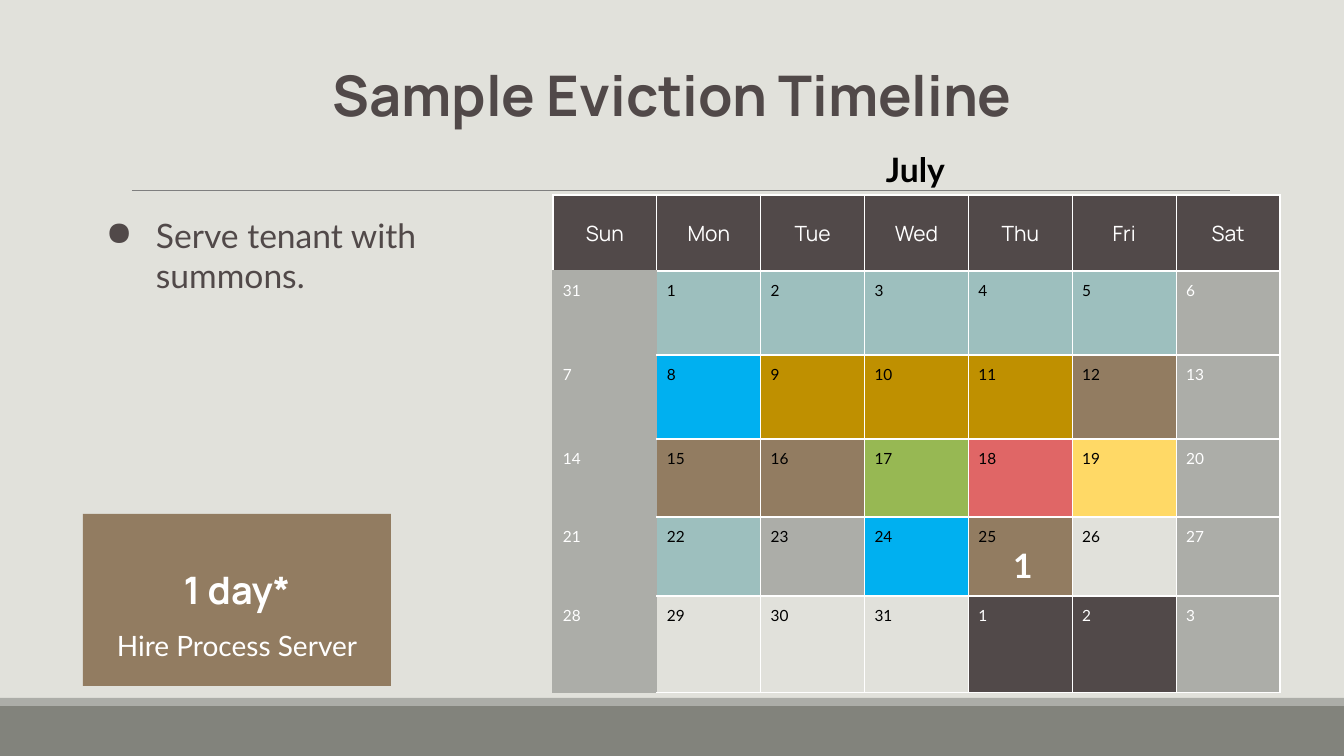
from lxml import etree
from pptx import Presentation
from pptx.dml.color import RGBColor
from pptx.enum.shapes import MSO_CONNECTOR as CONN, MSO_SHAPE as SHAPE
from pptx.enum.text import MSO_ANCHOR as ANCHOR, PP_ALIGN as ALIGN
from pptx.oxml.ns import qn
from pptx.util import Pt

# Content
TITLE = "Sample Eviction Timeline"
MONTH = "July"
TASK = "Serve tenant with summons."
DURATION, STEP = "1 day*", "Hire Process Server"
WEEKDAYS = ["Sun", "Mon", "Tue", "Wed", "Thu", "Fri", "Sat"]
WEEKS = [
    [31, 1, 2, 3, 4, 5, 6],
    [7, 8, 9, 10, 11, 12, 13],
    [14, 15, 16, 17, 18, 19, 20],
    [21, 22, 23, 24, 25, 26, 27],
    [28, 29, 30, 31, 1, 2, 3],
]
BG, DARK, GREY, WHITE, BLACK = "E1E1DB", "514949", "ACADA8", "FFFFFF", "000000"
TEAL, BLUE, GOLD, BROWN = "9DBFBE", "00B0F0", "BF9000", "927C61"
GREEN, RED, YELLOW = "97B853", "E06666", "FFD966"
DAY_FILLS = [
    [GREY, TEAL, TEAL, TEAL, TEAL, TEAL, GREY],
    [GREY, BLUE, GOLD, GOLD, GOLD, BROWN, GREY],
    [GREY, BROWN, BROWN, GREEN, RED, YELLOW, GREY],
    [GREY, TEAL, GREY, BLUE, BROWN, BG, GREY],
    [GREY, BG, BG, BG, DARK, DARK, GREY],
]
COUNTED_DAY, COUNT = (4, 4), "1"  # table row and column

# Layout in px
TABLE_X, TABLE_Y, TABLE_W = 553, 195, 727
ROW_HEIGHTS = [76, 84, 84, 78, 79, 97]
BANDS = [(706, 50, "82837C"), (698, 8, GREY)]


def px(n):
    return round(n * 914400 / 100.8)


def rgb(color):
    return RGBColor.from_string(color)


def style(p, size, font, color, bold=False, align=ALIGN.CENTER):
    p.alignment = align
    for r in p.runs:
        r.font.size, r.font.name, r.font.bold = Pt(size), font, bold
        r.font.color.rgb = rgb(color)


def set_insets(box, left, top, right, bottom):
    box.margin_left, box.margin_top = px(left), px(top)
    box.margin_right, box.margin_bottom = px(right), px(bottom)


def add_rect(x, y, w, h, color):
    s = shapes.add_shape(SHAPE.RECTANGLE, px(x), px(y), px(w), px(h))
    s.shadow.inherit = False
    s.fill.solid()
    s.fill.fore_color.rgb = rgb(color)
    s.line.fill.background()


def add_text(x, y, w, h, text, insets=(5, 3, 5, 3)):
    tf = shapes.add_textbox(px(x), px(y), px(w), px(h)).text_frame
    tf.word_wrap = True
    set_insets(tf, *insets)
    tf.text = text
    return tf


def set_borders(cell, colors):
    tcPr = cell._tc.get_or_add_tcPr()
    for i, (side, color) in enumerate(zip(("lnL", "lnR", "lnT", "lnB"), colors)):
        ln = etree.Element(qn(f"a:{side}"), w=str(Pt(1)))
        fill = etree.SubElement(ln, qn("a:solidFill"))
        etree.SubElement(fill, qn("a:srgbClr"), val=color)
        tcPr.insert(i, ln)


prs = Presentation()
prs.slide_width, prs.slide_height = px(1344), px(756)
slide = prs.slides.add_slide(prs.slide_layouts[6])
slide.background.fill.solid()
slide.background.fill.fore_color.rgb = rgb(BG)
shapes = slide.shapes

# Footer bands and title rule
for y, h, color in BANDS:
    add_rect(0, y, 1344, h, color)
rule = shapes.add_connector(CONN.STRAIGHT, px(132), px(191), px(1230), px(191))
rule.line.color.rgb, rule.line.width = rgb("7F7F7F"), Pt(0.75)
etree.SubElement(rule._element.spPr, qn("a:effectLst"))

# Title
tf = add_text(156, 58, 1032, 73, TITLE)
tf.vertical_anchor = ANCHOR.MIDDLE
style(tf.paragraphs[0], 40, "Manrope", DARK, bold=True)

# Calendar
table = shapes.add_table(len(ROW_HEIGHTS), len(WEEKDAYS), px(TABLE_X), px(TABLE_Y),
                         px(TABLE_W), px(sum(ROW_HEIGHTS))).table
for col in table.columns:
    col.width = px(TABLE_W / len(WEEKDAYS))
for row, h in zip(table.rows, ROW_HEIGHTS):
    row.height = px(h)

for i, labels in enumerate([WEEKDAYS] + WEEKS):
    for j, label in enumerate(labels):
        cell = table.cell(i, j)
        header = i == 0
        fill = DARK if header else DAY_FILLS[i - 1][j]
        cell.text = str(label)
        p = cell.text_frame.paragraphs[0]
        if header:
            set_insets(cell, 7, 3, 7, 3)
            cell.vertical_anchor = ANCHOR.MIDDLE
            style(p, 15, "Manrope", WHITE)
        else:
            set_insets(cell, 10, 10, 5, 3)
            pale = j in (0, 6) or fill == DARK
            style(p, 11, "Lato", WHITE if pale else BLACK, align=ALIGN.LEFT)
        if (i, j) == COUNTED_DAY:
            p = cell.text_frame.add_paragraph()
            p.text = COUNT
            style(p, 24, "Lato", WHITE, bold=True)
        cell.fill.solid()
        cell.fill.fore_color.rgb = rgb(fill)
        # Sundays blend into one grey column
        if j == 0:
            set_borders(cell, [WHITE] * 3 + [GREY] if header else [GREY] * 4)
        else:
            left = GREY if j == 1 and not header else WHITE
            set_borders(cell, [left] + [WHITE] * 3)

# Task bullet
p = add_text(83, 212, 383, 222, TASK).paragraphs[0]
style(p, 24, "Lato", DARK, align=ALIGN.LEFT)
pPr = p._p.get_or_add_pPr()
pPr.set("marL", str(px(68)))
pPr.set("indent", str(px(-50)))
bullet_color = etree.SubElement(pPr, qn("a:buClr"))
etree.SubElement(bullet_color, qn("a:srgbClr"), val=DARK)
etree.SubElement(pPr, qn("a:buChar"), char="●")

# Duration card
add_rect(83, 514, 308, 172, BROWN)
tf = add_text(109, 541, 256, 149, DURATION)
tf.add_paragraph().text = STEP
style(tf.paragraphs[0], 27, "Manrope", WHITE, bold=True)
style(tf.paragraphs[1], 20, "Lato", WHITE)
for p in tf.paragraphs:
    p.line_spacing = 1.5

# Month name
tf = add_text(762, 136, 307, 68, MONTH, insets=(13, 13, 13, 13))
style(tf.paragraphs[0], 24, "Lato", BLACK, bold=True)

prs.save("out.pptx")
